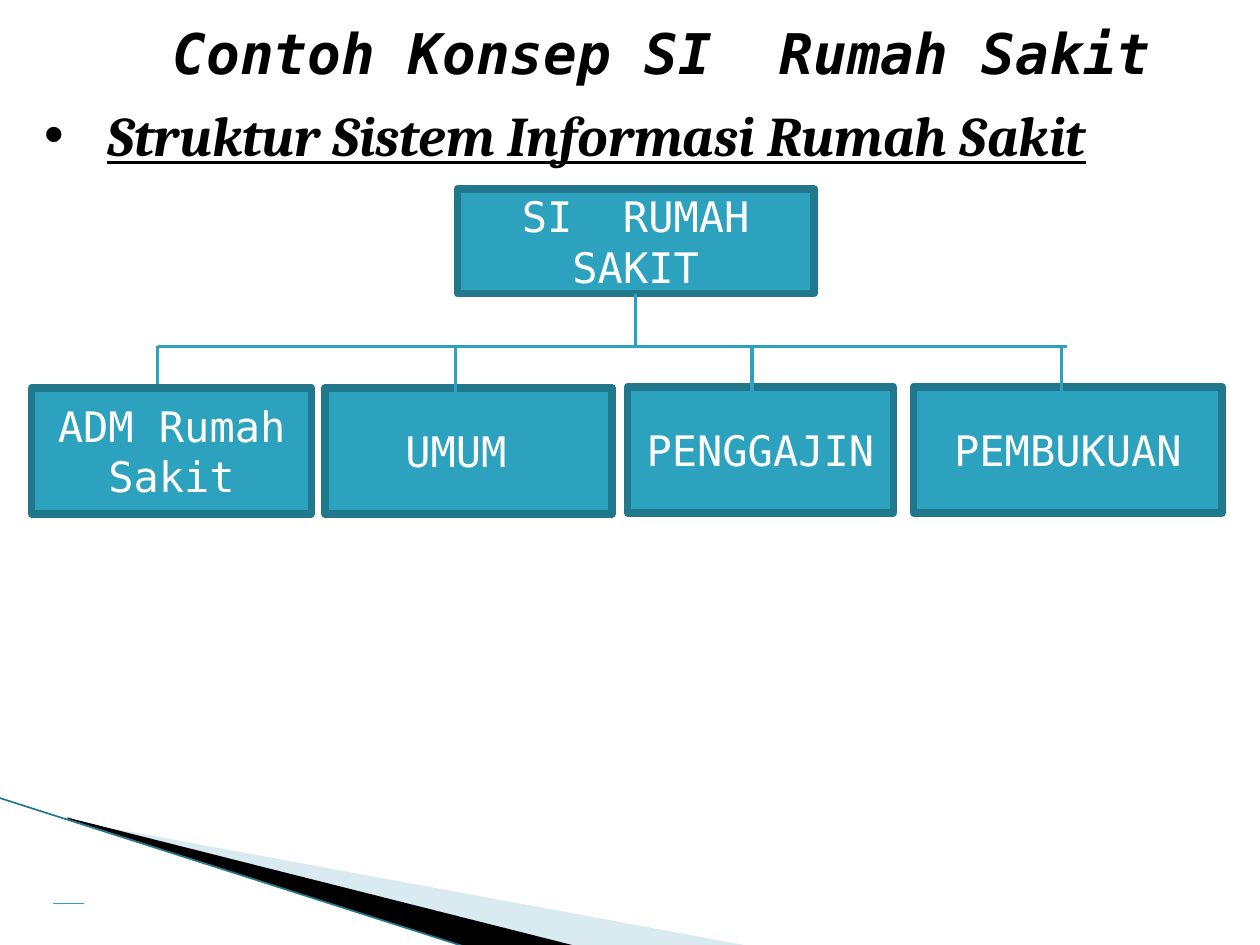
from lxml.etree import SubElement
from pptx import Presentation
from pptx.dml.color import RGBColor
from pptx.enum.shapes import MSO_CONNECTOR, MSO_SHAPE
from pptx.enum.text import MSO_ANCHOR, MSO_AUTO_SIZE, PP_ALIGN
from pptx.oxml.ns import qn
from pptx.util import Cm, Pt

BLACK = RGBColor(0x00, 0x00, 0x00)
WHITE = RGBColor(0xFF, 0xFF, 0xFF)
TEAL = RGBColor(0x2D, 0xA2, 0xBF)
DARK_TEAL = RGBColor(0x21, 0x78, 0x8D)
PALE_BLUE = RGBColor(0xA0, 0xCB, 0xDC)

MONO = "DejaVu Sans Mono"
TITLE_FONT = {"name": MONO, "size": Pt(32), "bold": True, "italic": True}
HEADING_FONT = {**TITLE_FONT, "name": "Cambria", "underline": True}
BOX_FONT = {"name": MONO, "size": Pt(24)}

ROOT_BOX = ("SI  RUMAH SAKIT", 9.22, 3.81, 7.19, 2.11)
ADMIN_BOX = ("ADM Rumah Sakit", 0.64, 7.82, 5.64, 2.54)
UNIT_BOXES = [
    ("UMUM ", 6.55, 7.82, 5.79, 2.54),
    ("PEMBUKUAN", 18.42, 7.8, 6.22, 2.54),
    ("PENGGAJIN", 12.65, 7.8, 5.36, 2.54),
]
BUS_Y = 6.98
BRANCH_END_Y = 8.2
BRANCH_XS = [3.18, 9.19, 15.16, 21.39]

WEDGES = [
    ([(1.4, 16.54), (15.11, 19.07), (11.58, 19.07), (1.4, 16.51)], PALE_BLUE, 40),
    ([(1.35, 16.48), (11.61, 19.07), (9.45, 19.1), (1.37, 16.51)], BLACK, 100),
]


def set_text(paragraph, text, font_values, color):
    run = paragraph.add_run()
    run.text = text
    for name, value in font_values.items():
        setattr(run.font, name, value)
    run.font.color.rgb = color


def add_box(slide, text, left, top, width, height):
    box = slide.shapes.add_shape(
        MSO_SHAPE.RECTANGLE, Cm(left), Cm(top), Cm(width), Cm(height))
    box.shadow.inherit = False
    box.fill.solid()
    box.fill.fore_color.rgb = TEAL
    box.line.color.rgb = DARK_TEAL
    box.line.width = Pt(4.33)
    frame = box.text_frame
    frame.word_wrap = True
    frame.vertical_anchor = MSO_ANCHOR.MIDDLE
    frame.paragraphs[0].alignment = PP_ALIGN.CENTER
    set_text(frame.paragraphs[0], text, BOX_FONT, WHITE)
    return box


def add_line(slide, start, end, color=TEAL, width=1.75):
    line = slide.shapes.add_connector(
        MSO_CONNECTOR.STRAIGHT, *(Cm(value) for value in (*start, *end)))
    line.line.color.rgb = color
    line.line.width = Pt(width)
    SubElement(line._element.spPr, qn("a:effectLst"))
    return line


def add_wedge(slide, points, color, opacity):
    start, *others = [(Cm(x), Cm(y)) for x, y in points]
    builder = slide.shapes.build_freeform(*start)
    builder.add_line_segments(others, close=True)
    wedge = builder.convert_to_shape()
    wedge.shadow.inherit = False
    wedge.line.fill.background()
    wedge.fill.solid()
    wedge.fill.fore_color.rgb = color
    if opacity < 100:
        color_element = wedge._element.spPr.find(
            f"{qn('a:solidFill')}/{qn('a:srgbClr')}")
        SubElement(color_element, qn("a:alpha"), val=str(opacity * 1000))


def add_title(slide):
    title = slide.shapes.title
    title.left, title.top, title.width, title.height = (
        Cm(3.23), Cm(0.25), Cm(20.47), Cm(1.63))
    frame = title.text_frame
    frame.auto_size = MSO_AUTO_SIZE.NONE
    frame.vertical_anchor = MSO_ANCHOR.TOP
    frame.paragraphs[0].alignment = PP_ALIGN.LEFT
    set_text(frame.paragraphs[0], "Contoh Konsep SI  Rumah Sakit",
             TITLE_FONT, BLACK)


def add_heading(slide):
    heading = slide.shapes.add_textbox(Cm(0.64), Cm(1.91), Cm(24), Cm(1.63))
    frame = heading.text_frame
    frame.word_wrap = True
    paragraph = frame.paragraphs[0]
    properties = paragraph._p.get_or_add_pPr()
    properties.set("marL", str(Cm(1.27)))
    properties.set("indent", str(Cm(-1.27)))
    SubElement(properties, qn("a:buFont"), typeface="Arial")
    SubElement(properties, qn("a:buChar"), char="•")
    set_text(paragraph, "Struktur Sistem Informasi Rumah Sakit",
             HEADING_FONT, BLACK)


def add_organisation_chart(slide):
    root = add_box(slide, *ROOT_BOX)
    for box in UNIT_BOXES:
        add_box(slide, *box)
    trunk = add_line(slide, (12.81, 5.92), (12.81, BUS_Y))
    trunk.begin_connect(root, 2)
    add_line(slide, (BRANCH_XS[0], BUS_Y), (21.51, BUS_Y))
    for x in BRANCH_XS:
        add_line(slide, (x, BUS_Y), (x, BRANCH_END_Y))
    # The administration box covers the end of its branch.
    add_box(slide, *ADMIN_BOX)


def main():
    presentation = Presentation()
    presentation.slide_width = Cm(25.4)
    presentation.slide_height = Cm(19.05)
    slide = presentation.slides.add_slide(presentation.slide_layouts[5])
    for wedge in WEDGES:
        add_wedge(slide, *wedge)
    add_line(slide, (-0.03, 16.08), (9.42, 19.1), DARK_TEAL, 0.95)
    add_title(slide)
    add_heading(slide)
    add_organisation_chart(slide)
    add_line(slide, (1.07, 18.21), (1.7, 18.21), width=0.75)
    presentation.save("out.pptx")


if __name__ == "__main__":
    main()
